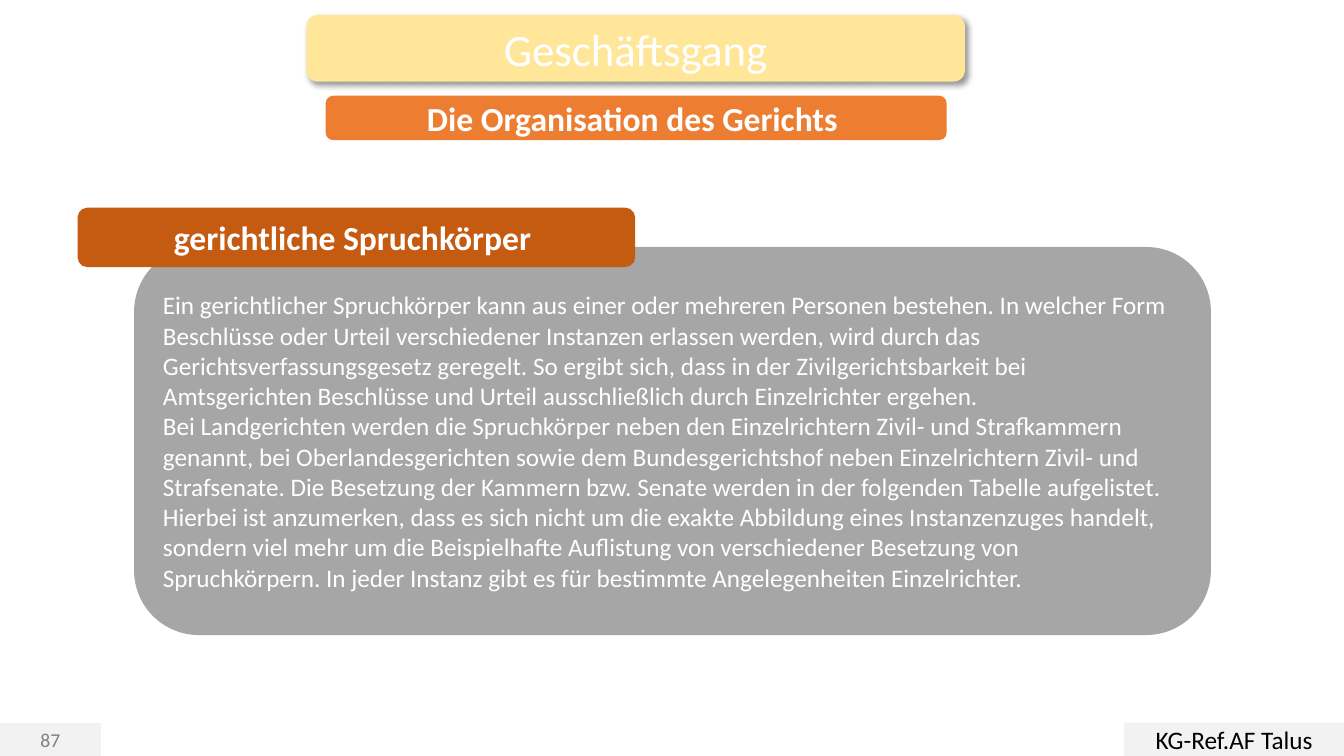
import pptx
import pptx.dml.color
import pptx.enum.shapes
import pptx.enum.text
import pptx.util
from lxml import etree
from pptx.oxml.ns import qn

WIDTH, HEIGHT = 13.33, 7.5
RECT = pptx.enum.shapes.MSO_SHAPE.RECTANGLE
ROUNDED = pptx.enum.shapes.MSO_SHAPE.ROUNDED_RECTANGLE
CENTER = pptx.enum.text.PP_ALIGN.CENTER
LEFT = pptx.enum.text.PP_ALIGN.LEFT

RULING_BODIES = [
    "Ein gerichtlicher Spruchkörper kann aus einer oder mehreren Personen bestehen. "
    "In welcher Form Beschlüsse oder Urteil verschiedener Instanzen erlassen werden, "
    "wird durch das Gerichtsverfassungsgesetz geregelt. So ergibt sich, dass in der "
    "Zivilgerichtsbarkeit bei Amtsgerichten Beschlüsse und Urteil ausschließlich durch "
    "Einzelrichter ergehen.",
    "Bei Landgerichten werden die Spruchkörper neben den Einzelrichtern Zivil- und "
    "Strafkammern genannt, bei Oberlandesgerichten sowie dem Bundesgerichtshof neben "
    "Einzelrichtern Zivil- und Strafsenate. Die Besetzung der Kammern bzw. Senate werden "
    "in der folgenden Tabelle aufgelistet. Hierbei ist anzumerken, dass es sich nicht um "
    "die exakte Abbildung eines Instanzenzuges handelt, sondern viel mehr um die "
    "Beispielhafte Auflistung von verschiedener Besetzung von Spruchkörpern. In jeder "
    "Instanz gibt es für bestimmte Angelegenheiten Einzelrichter.",
]


def color(hex_value):
    return pptx.dml.color.RGBColor.from_string(hex_value)


def add_panel(slide, kind, area, fill, paragraphs, size, ink="FFFFFF", bold=False, align=CENTER):
    """Filled panel with text; area is left, top, width, height in inches."""
    panel = slide.shapes.add_shape(kind, *(pptx.util.Inches(length) for length in area))
    panel.shadow.inherit = False
    panel.fill.solid()
    panel.fill.fore_color.rgb = color(fill)
    panel.line.fill.background()
    frame = panel.text_frame
    frame.word_wrap = True
    frame.vertical_anchor = pptx.enum.text.MSO_ANCHOR.MIDDLE
    frame.text = "\n".join(paragraphs)
    for paragraph in frame.paragraphs:
        paragraph.alignment = align
        paragraph.font.name = "Calibri"
        paragraph.font.size = pptx.util.Pt(size)
        paragraph.font.bold = bold
        paragraph.font.color.rgb = color(ink)
    return panel


def add_shadow(panel, blur, distance, angle, opacity):
    """Black outer shadow: points, degrees and percent."""
    effects = panel._element.spPr.find(qn("a:effectLst"))
    shadow = etree.SubElement(
        effects, qn("a:outerShdw"), blurRad=str(pptx.util.Pt(blur)),
        dist=str(pptx.util.Pt(distance)), dir=str(angle * 60000), algn="tl", rotWithShape="0")
    black = etree.SubElement(shadow, qn("a:srgbClr"), val="000000")
    etree.SubElement(black, qn("a:alpha"), val=str(opacity * 1000))


def add_footer(slide, left, width, height, text, size, ink):
    """Grey box resting on the bottom edge."""
    return add_panel(slide, RECT, (left, HEIGHT - height, width, height),
                     "F2F2F2", [text], size, ink)


def main():
    deck = pptx.Presentation()
    deck.slide_width = pptx.util.Inches(WIDTH)
    deck.slide_height = pptx.util.Inches(HEIGHT)
    slide = deck.slides.add_slide(deck.slide_layouts[6])

    # Footer: page number and course
    page_number = add_footer(slide, 0, 1, 0.32, "87", 14, "808080")
    page_number.line.color.rgb = color("F2F2F2")
    page_number.line.width = pptx.util.Pt(1)
    add_footer(slide, WIDTH - 2.18, 2.18, 0.33, "KG-Ref.AF Talus", 18, "000000")

    # Heading and subheading
    add_panel(slide, ROUNDED, (3.23, 0.95, 6.16, 0.44), "ED7D31",
              ["Die Organisation des Gerichts "], 24, bold=True)
    heading = add_panel(slide, ROUNDED, (3.04, 0.15, 6.53, 0.66), "FFE699",
                        ["Geschäftsgang"], 32)
    add_shadow(heading, blur=4, distance=3, angle=45, opacity=40)

    # Explanation with its label overlapping the top edge
    add_panel(slide, ROUNDED, (1.33, 2.45, 10.68, 3.85), "A6A6A6",
              RULING_BODIES, 18, align=LEFT)
    add_panel(slide, ROUNDED, (0.77, 2.06, 5.53, 0.59), "C55A11",
              ["gerichtliche Spruchkörper "], 24, bold=True)

    deck.save("out.pptx")


if __name__ == "__main__":
    main()
